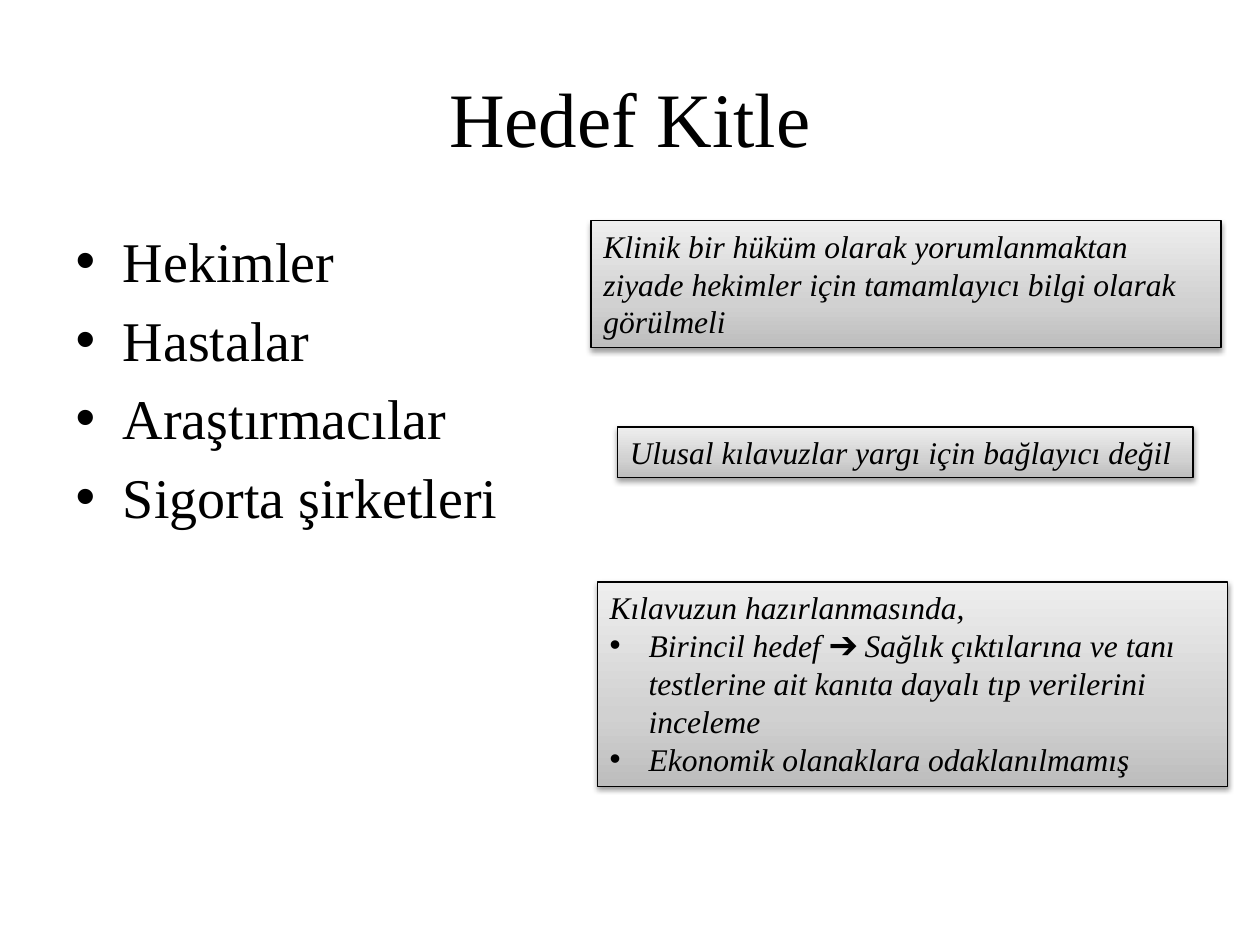
from copy import deepcopy

from lxml.etree import SubElement
from pptx import Presentation
from pptx.dml.color import RGBColor as RGB
from pptx.enum.shapes import MSO_SHAPE as SHAPE
from pptx.enum.text import MSO_ANCHOR as ANCHOR, MSO_AUTO_SIZE as AUTO, PP_ALIGN as ALIGN
from pptx.oxml.ns import qn
from pptx.util import Inches, Pt

COLORS = {"text": "000000", "line": "000000", "shadow": "000000",
          "dark": "BDBDBD", "mid": "D1D1D1", "light": "EEEEEE"}
STOPS = [(0, "dark"), (0.35, "mid"), (1, "light")]


class Deck:
    font = "Times New Roman"

    def __init__(self):
        self.prs = Presentation()
        self.prs.slide_width, self.prs.slide_height = Inches(10), Inches(7.5)
        self.s = self.prs.slides.add_slide(self.prs.slide_layouts[1])

    def set_text(self, tf, lines, size, italic=None, align=None):
        tf.text = "\n".join(lines)
        for p in tf.paragraphs:
            p.alignment = align
            p.font.name, p.font.size, p.font.italic = self.font, Pt(size), italic
            p.font.color.rgb = RGB.from_string(COLORS["text"])

    def placeholder(self, idx, box, lines, size):
        sp = self.s.placeholders[idx]
        sp.left, sp.top, sp.width, sp.height = map(Inches, box)
        self.set_text(sp.text_frame, lines, size)

    def note(self, box, lines, wrap=True):
        sp = self.s.shapes.add_shape(SHAPE.RECTANGLE, *map(Inches, box))
        self.gradient(sp)
        sp.line.color.rgb = RGB.from_string(COLORS["line"])
        sp.line.width = Pt(0.75)
        self.shadow(sp)
        tf = sp.text_frame
        tf.word_wrap, tf.auto_size = wrap, AUTO.SHAPE_TO_FIT_TEXT
        tf.vertical_anchor = ANCHOR.TOP
        self.set_text(tf, lines, 18, True, ALIGN.LEFT)
        for p in tf.paragraphs[1:]:
            self.bullet(p)

    def gradient(self, sp):
        sp.fill.gradient()
        sp.fill.gradient_angle = 90
        stop_list = next(sp.element.iter(qn("a:gsLst")))
        stop_list.append(deepcopy(stop_list[-1]))
        for stop, (position, name) in zip(sp.fill.gradient_stops, STOPS):
            stop.position = position
            stop.color.rgb = RGB.from_string(COLORS[name])

    def shadow(self, sp):
        sp.shadow.inherit = False
        effects = next(sp.element.iter(qn("a:effectLst")))
        outer = SubElement(effects, qn("a:outerShdw"), blurRad=str(Pt(3.1)),
                           dist=str(Pt(1.6)), dir="5400000", rotWithShape="0")
        color = SubElement(outer, qn("a:srgbClr"), val=COLORS["shadow"])
        SubElement(color, qn("a:alpha"), val="38000")

    def bullet(self, p):
        pPr = p._p.get_or_add_pPr()
        pPr.set("marL", str(Inches(0.31)))
        pPr.set("indent", str(Inches(-0.31)))
        face = pPr.makeelement(qn("a:buFont"), {"typeface": "Arial"})
        mark = pPr.makeelement(qn("a:buChar"), {"char": "•"})
        pPr.insert(0, face)
        pPr.insert(1, mark)


def main():
    deck = Deck()
    deck.placeholder(0, (0.5, 0.3, 9, 1.25), ["Hedef Kitle"], 44)
    deck.placeholder(1, (0.5, 1.75, 3.64, 2.81),
                     ["Hekimler", "Hastalar", "Araştırmacılar", "Sigorta şirketleri"], 32)
    deck.note((4.69, 1.75, 5, 1.01),
              ["Klinik bir hüküm olarak yorumlanmaktan ziyade hekimler için "
               "tamamlayıcı bilgi olarak görülmeli"])
    deck.note((4.9, 3.39, 4.57, 0.4),
              ["Ulusal kılavuzlar yargı için bağlayıcı değil"], wrap=False)
    deck.note((4.74, 4.62, 5, 1.62),
              ["Kılavuzun hazırlanmasında,",
               "Birincil hedef ➔ Sağlık çıktılarına ve tanı testlerine ait "
               "kanıta dayalı tıp verilerini inceleme",
               "Ekonomik olanaklara odaklanılmamış"])
    deck.prs.save("out.pptx")


if __name__ == "__main__":
    main()
